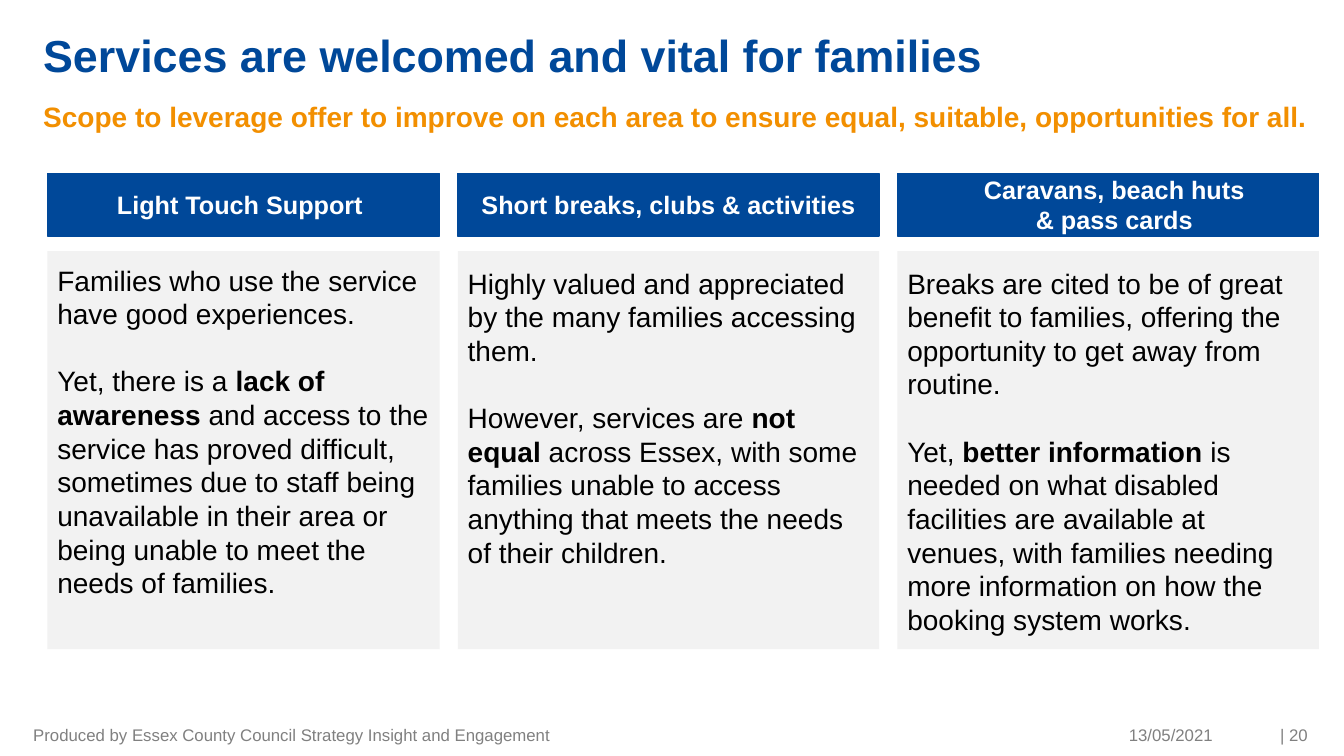
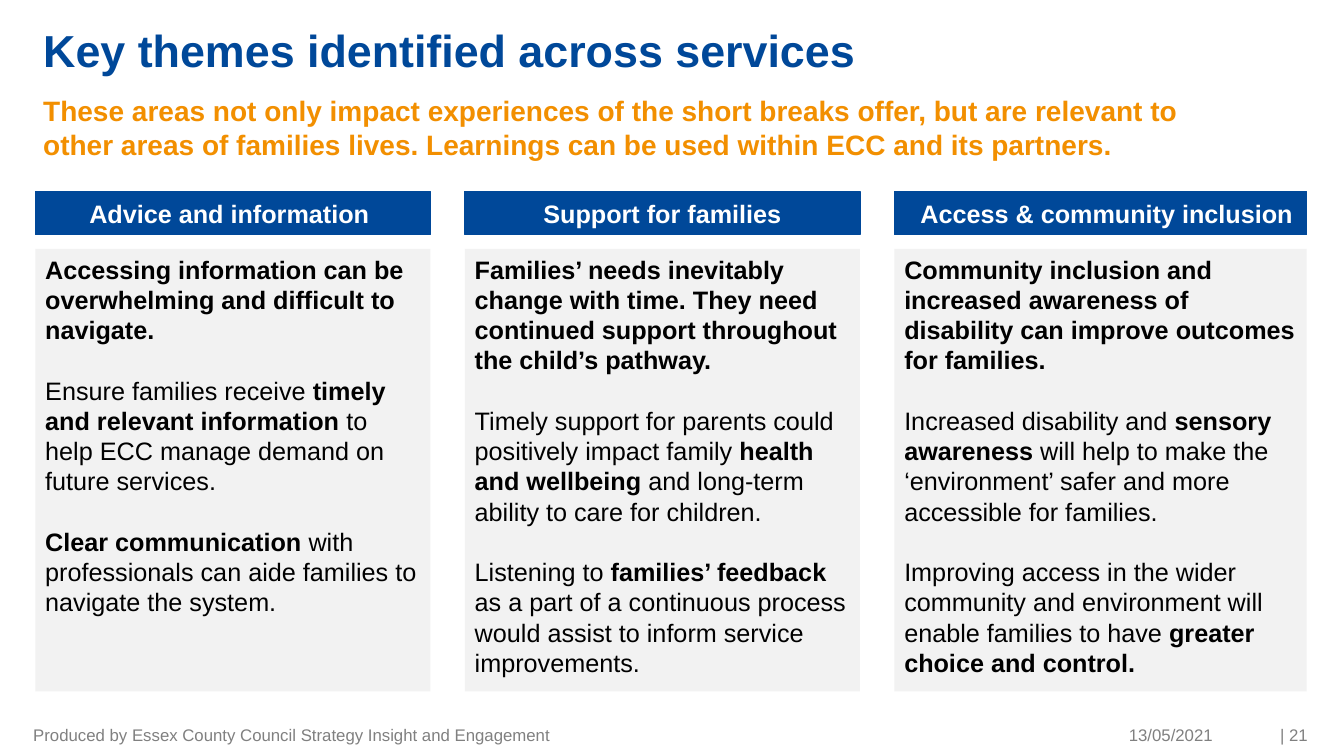
from pptx import Presentation
from pptx.dml.color import RGBColor
from pptx.enum import shapes, text
from pptx.util import Inches, Pt

FONT = "Arial"
COLORS = {"blue": "004899", "gold": "F28F00", "gray": "808080",
          "pale": "F2F2F2", "white": "FFFFFF", "black": "000000"}
LEFT, CENTER, RIGHT = text.PP_ALIGN.LEFT, text.PP_ALIGN.CENTER, text.PP_ALIGN.RIGHT
TOP, MIDDLE = text.MSO_ANCHOR.TOP, text.MSO_ANCHOR.MIDDLE
SHIFTS = [-0.07, 0, 0.12]

SLIDES = [
    {
        "title": ("Services are welcomed and vital for families", (0.33, 0, 11.4, 1.03)),
        "lead": ("Scope to leverage offer to improve on each area to ensure equal, "
                 "suitable, opportunities for all.", (0.33, 0.94, 12.84, 0.47)),
        "page": 20, "left": 0.47, "gap": 0.18, "widths": [3.89, 4.18, 4.18],
        "head": (1.72, 0.62), "body": (2.49, 3.95), "size": 20,
        "pads": [0.12, 0.15, 0.15],
        "columns": [
            ("Light Touch Support", [
                "Families who use the service have good experiences.",
                "Yet, there is a **lack of awareness** and access to the service has "
                "proved difficult, sometimes due to staff being unavailable in their "
                "area or being unable to meet the needs of families."]),
            ("Short breaks, clubs & activities", [
                "Highly valued and appreciated by the many families accessing them.",
                "However, services are **not equal** across Essex, with some families "
                "unable to access anything that meets the needs of their children."]),
            ("Caravans, beach huts\n& pass cards", [
                "Breaks are cited to be of great benefit to families, offering the "
                "opportunity to get away from routine.",
                "Yet, **better information** is needed on what disabled facilities are "
                "available at venues, with families needing more information on how "
                "the booking system works."]),
        ],
    },
    {
        "title": ("Key themes identified across services", (0.33, 0.06, 11.4, 0.81)),
        "lead": ("These areas not only impact experiences of the short breaks offer, but "
                 "are relevant to other areas of families lives. Learnings can be used "
                 "within ECC and its partners.", (0.33, 0.88, 11.48, 0.89)),
        "page": 21, "left": 0.35, "gap": 0.34, "widths": [3.92, 3.92, 4.09],
        "head": (1.9, 0.43), "body": (2.47, 4.39), "size": 18,
        "pads": [0.05, 0.05, 0.05],
        "columns": [
            ("Advice and information", [
                "**Accessing information can be overwhelming and difficult to navigate.**",
                "Ensure families receive **timely and relevant information** to help ECC "
                "manage demand on future services.",
                "**Clear communication** with professionals can aide families to navigate "
                "the system."]),
            ("Support for families", [
                "**Families’ needs inevitably change with time. They need continued "
                "support throughout the child’s pathway.**",
                "Timely support for parents could positively impact family **health and "
                "wellbeing** and long-term ability to care for children.",
                "Listening to **families’ feedback** as a part of a continuous process "
                "would assist to inform service improvements."]),
            ("Access & community inclusion", [
                "**Community inclusion and increased awareness of disability can improve "
                "outcomes for families.**",
                "Increased disability and **sensory awareness** will help to make the "
                "‘environment’ safer and more accessible for families.",
                "Improving access in the wider community and environment will enable "
                "families to have **greater choice and control.**"]),
        ],
    },
]


def rgb(name):
    return RGBColor.from_string(COLORS[name])


def write(shape, lines, size, color, bold=False, align=LEFT, anchor=TOP,
          pads=(0.1, 0.05, 0.1, 0.05), gap=0):
    frame = shape.text_frame
    frame.word_wrap = True
    frame.vertical_anchor = anchor
    frame.margin_left, frame.margin_top, frame.margin_right, frame.margin_bottom = map(Inches, pads)
    for i, line in enumerate(lines):
        para = frame.add_paragraph() if i else frame.paragraphs[0]
        para.alignment = align
        para.space_before = Pt(gap if i else 0)
        for j, part in enumerate(line.split("**")):
            if part:
                run = para.add_run()
                run.text = part
                font = run.font
                font.name, font.size, font.bold = FONT, Pt(size), bold or j % 2 == 1
                font.color.rgb = rgb(color)


def label(slide, words, box, size, color, **style):
    shape = slide.shapes.add_textbox(*map(Inches, box))
    write(shape, [words], size, color, **style)


def panel(slide, box, fill, edge=False):
    shape = slide.shapes.add_shape(shapes.MSO_SHAPE.RECTANGLE, *map(Inches, box))
    shape.shadow.inherit = False
    shape.fill.solid()
    shape.fill.fore_color.rgb = rgb(fill)
    if edge:
        shape.line.color.rgb = rgb(fill)
        shape.line.width = Pt(1)
    else:
        shape.line.fill.background()
    return shape


def footer(slide, page):
    label(slide, "Produced by Essex County Council Strategy Insight and Engagement",
          (0.33, 7.21, 6.3, 0.15), 12, "gray", anchor=MIDDLE, pads=(0, 0.05, 0.1, 0.05))
    for words, x, width in [("13/05/2021", 9.63, 2.4), (f"| {page}", 12.12, 0.85)]:
        label(slide, words, (x, 7.21, width, 0.15), 12, "gray", align=RIGHT,
              anchor=MIDDLE, pads=(0.1, 0.05, 0, 0.05))


def columns(slide, data):
    x, size = data["left"], data["size"]
    rows = zip(data["columns"], data["widths"], data["pads"], SHIFTS)
    for (name, lines), width, pad, shift in rows:
        top, height = data["head"]
        head = panel(slide, (x, top, width, height), "blue", edge=True)
        sides = (0.1 + max(shift, 0), 0.05, 0.1 + max(-shift, 0), 0.05)
        write(head, name.split("\n"), 18, "white", bold=True, align=CENTER,
              anchor=MIDDLE, pads=sides)
        top, height = data["body"]
        body = panel(slide, (x, top, width, height), "pale")
        write(body, lines, size, "black", pads=(0.1, pad, 0.1, 0.05), gap=size * 1.2)
        x += width + data["gap"]


def main():
    deck = Presentation()
    deck.slide_width, deck.slide_height = Inches(13.33), Inches(7.5)
    for data in SLIDES:
        slide = deck.slides.add_slide(deck.slide_layouts[6])
        label(slide, *data["title"], 32, "blue", bold=True, anchor=MIDDLE,
              pads=(0.1, 0.05, 0.1, 0))
        label(slide, *data["lead"], 20, "gold", bold=True)
        footer(slide, data["page"])
        columns(slide, data)
    deck.save("out.pptx")


if __name__ == "__main__":
    main()
